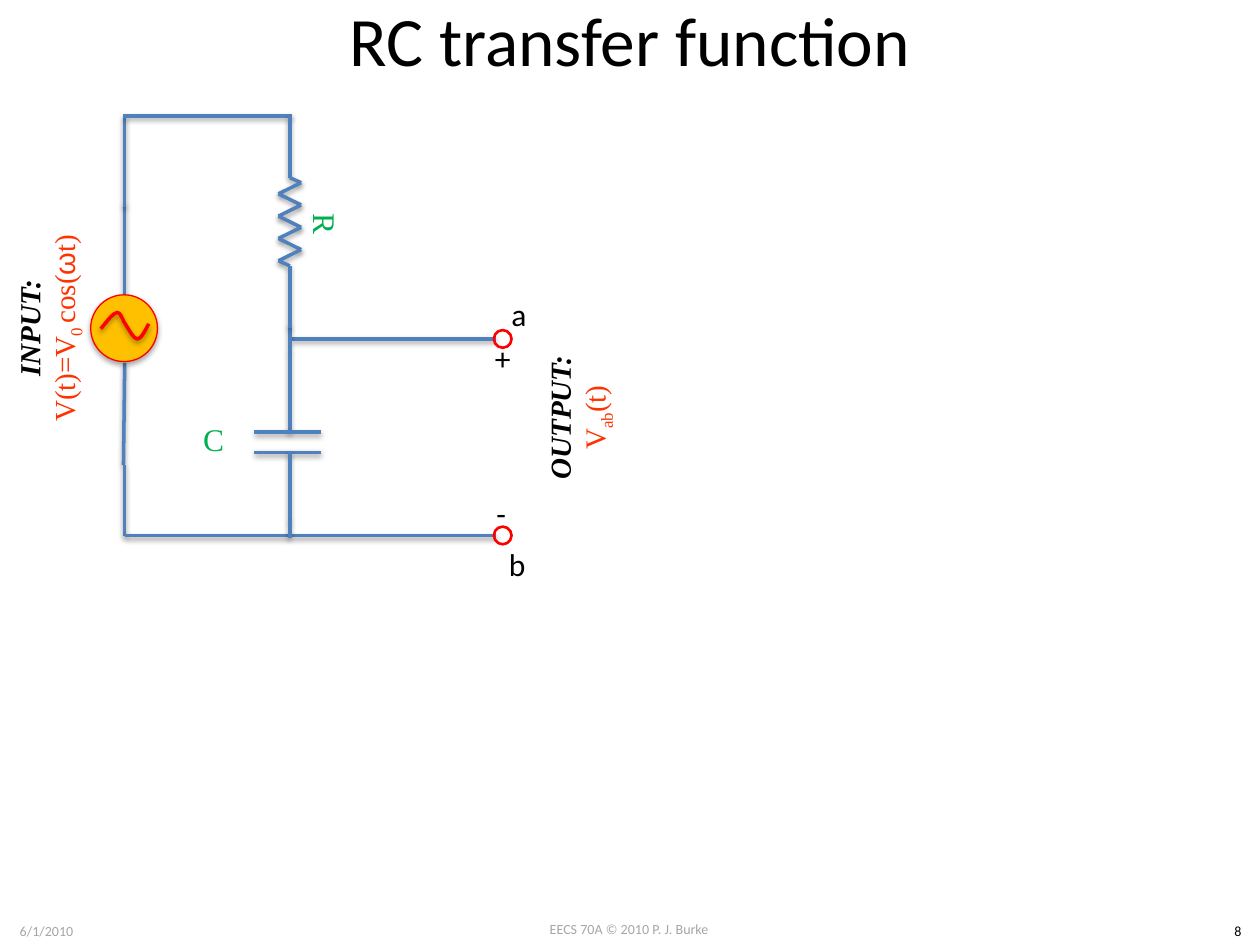
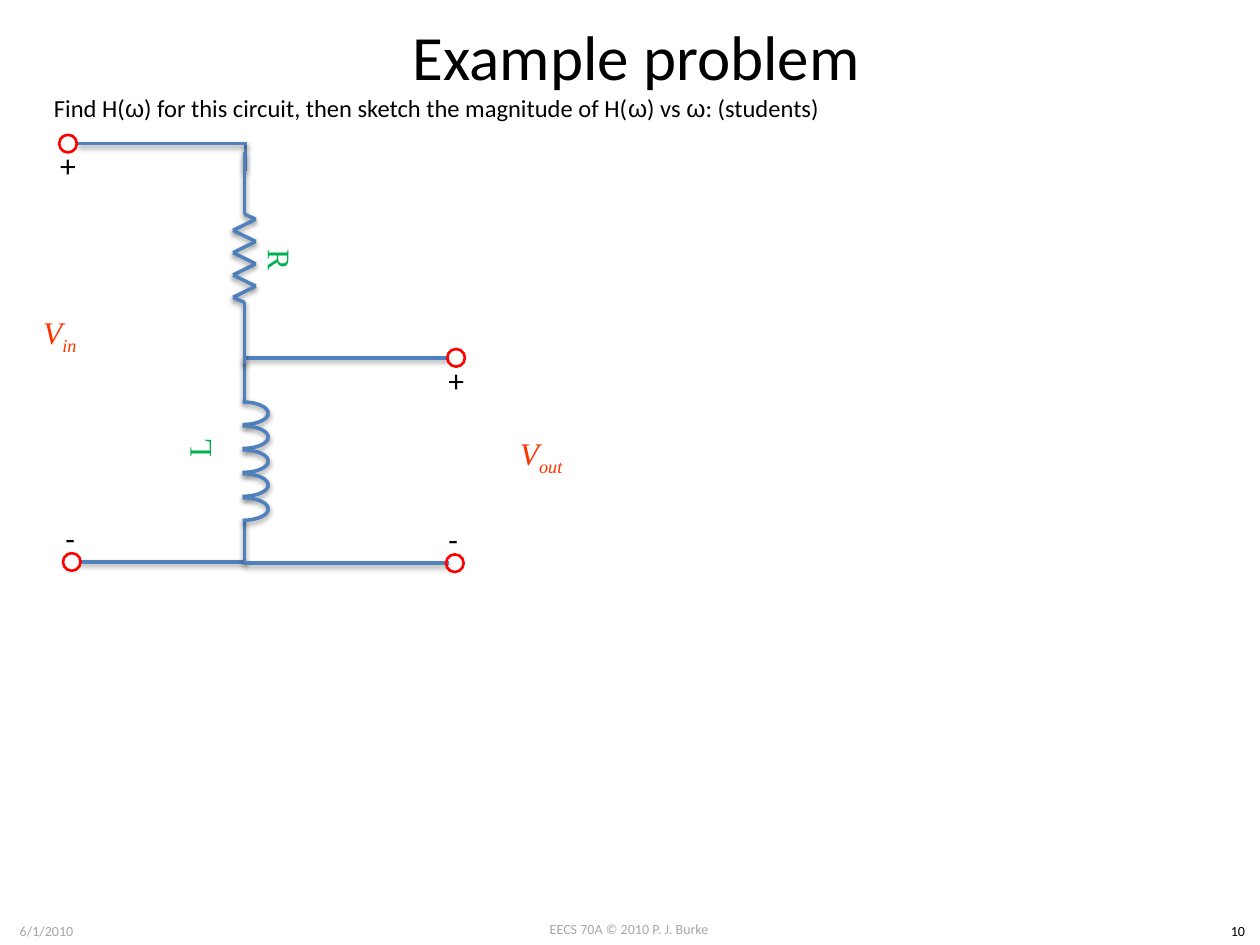
from dataclasses import dataclass
from itertools import pairwise
from lxml.etree import SubElement
from pptx import Presentation
from pptx.dml.color import RGBColor
from pptx.enum.shapes import MSO_CONNECTOR as Link, MSO_SHAPE as Form
from pptx.enum.text import MSO_ANCHOR as Anchor, MSO_AUTO_SIZE as Fit, PP_ALIGN as Align
from pptx.oxml.ns import qn
from pptx.util import Inches, Pt


@dataclass(frozen=True)
class Theme:
    wire: str = "4F81BD"
    node: str = "FF0000"
    supply: str = "FFC000"
    ink: str = "000000"
    gray: str = "A6A6A6"
    volt: str = "FF3300"
    green: str = "00B050"
    sans: str = "Calibri"
    greek: str = "Arial"
    serif: str = "Times New Roman"
    small: float = 8
    body: float = 14
    port: float = 16.6
    label: float = 18
    thick: float = 2
    ring: float = 1.5
    thin: float = 0.75


T = Theme()

STYLES = {
    "foot": (T.sans, T.small, T.gray, False, False),
    "page": (T.sans, T.small, T.ink, False, False),
    "body": (T.sans, T.body, T.ink, False, False),
    "omega": (T.greek, T.body, T.ink, False, False),
    "mark": (T.sans, T.label, T.ink, False, False),
    "tag": (T.serif, T.label, T.green, False, False),
    "head": (T.serif, T.port, T.ink, True, True),
    "volt": (T.serif, T.port, T.volt, False, False),
    "freq": (T.greek, T.port, T.volt, False, False),
    "name": (T.serif, T.label, T.volt, False, True),
}

FOOTS = [
    ("EECS 70A © 2010 P. J. Burke", (3.83, 7.26, 2.33, 0.24)),
    ("6/1/2010", (0, 7.27, 0.74, 0.24)),
]
PAGE_BOX = (9.65, 7.27, 0.35, 0.24)
MARKS = {"+": 0.33, "-": 0.28, "a": 0.32, "b": 0.34}
DOT = 0.14
TAG_SIZE = (1.19, 0.73)

RC = {
    "title": "RC transfer function",
    "size": 39.6,
    "box": (0.5, 0, 9, 0.62),
    "page": "8",
    "wires": [
        [(0.98, 3.69), (0.99, 2.88)],
        [(0.99, 2.34), (0.99, 1.62)],
        [(0.99, 1.64), (0.99, 0.92)],
        [(2.32, 0.92), (0.98, 0.92)],
        [(0.99, 3.69), (0.99, 4.25), (2.31, 4.25)],
        [(2.32, 4.25), (3.94, 4.25)],
        [(2.32, 2.69), (3.94, 2.69)],
        [(2.3, 2.58), (2.3, 2.8), (2.3, 3.43)],
        [(2.55, 3.43), (2.02, 3.43)],
        [(2.55, 3.59), (2.02, 3.59)],
        [(2.3, 3.59), (2.3, 4.13), (2.3, 4.27)],
    ],
    "resistor": (2.3, 1.41),
    "nodes": [(3.92, 2.62), (3.92, 4.18)],
    "marks": [("a", 3.96, 2.29), ("b", 3.94, 4.28), ("+", 3.83, 2.64), ("-", 3.84, 3.87)],
    "tags": [("C", (1.1, 3.12), 0)],
}
PORTS = [
    ((-0.67, 2.24, 2.11, 0.61), [
        [("INPUT:", "head")],
        [("V(t)=V", "volt"), ("0 ", "volt", "sub"), ("cos(", "volt"), ("ω", "freq"), ("t)", "volt")],
    ]),
    ((3.54, 2.95, 2.11, 0.61), [
        [("OUTPUT:", "head")],
        [("V", "volt"), ("ab", "volt", "sub"), ("(t)", "volt")],
    ]),
]
SUPPLY_BOX = (0.72, 2.34, 0.53, 0.53)
SINE = [
    [(0.8, 2.61), (0.85, 2.55), (0.89, 2.49), (0.93, 2.48)],
    [(0.93, 2.48), (0.96, 2.48), (0.97, 2.54), (1, 2.58)],
    [(1, 2.58), (1.02, 2.61), (1.06, 2.69), (1.09, 2.69)],
    [(1.09, 2.69), (1.12, 2.69), (1.15, 2.63), (1.18, 2.57)],
]

RL = {
    "title": "Example problem",
    "size": 36,
    "box": (0.55, 0, 9, 0.87),
    "page": "10",
    "wires": [
        [(0.63, 4.46), (1.95, 4.46)],
        [(1.95, 1.36), (1.95, 1.14)],
        [(1.96, 1.14), (0.62, 1.14)],
        [(1.94, 3.19), (1.94, 2.84), (3.56, 2.84)],
        [(1.94, 4.12), (1.94, 4.47), (3.56, 4.47)],
    ],
    "resistor": (1.94, 1.7),
    "nodes": [(3.55, 2.77), (3.54, 4.4), (0.47, 1.07), (0.5, 4.39)],
    "marks": [("+", 3.46, 2.82), ("-", 3.46, 4.08), ("+", 0.38, 1.11), ("-", 0.42, 4.07)],
    "tags": [("L", (0.98, 3.19), 270)],
}
TASK = [
    ("Find H(", "body"), ("ω", "omega"),
    (") for this circuit, then sketch the magnitude of H(", "body"), ("ω", "omega"),
    (") vs ", "body"), ("ω", "omega"), (": (students)", "body"),
]
TASK_BOX = (0.33, 0.69, 8.91, 0.34)
NAMES = [("out", (3.91, 3.31, 0.77, 0.61)), ("in", (0.09, 2.35, 0.77, 0.61))]
COIL = {"left": 1.72, "top": 3.19, "turns": 5, "step": 0.19, "size": (0.41, 0.18)}


def rgb(code):
    return RGBColor.from_string(code)


def place(box):
    return [Inches(v) for v in box]


def cast(item, alpha=38, dist=1.6):
    props = item._element.spPr
    for old in props.findall(qn("a:effectLst")):
        props.remove(old)
    glow = SubElement(SubElement(props, qn("a:effectLst")), qn("a:outerShdw"),
                      blurRad=str(Pt(3.1)), dist=str(Pt(dist)), dir="5400000", rotWithShape="0")
    shade = SubElement(glow, qn("a:srgbClr"), val=T.ink)
    SubElement(shade, qn("a:alpha"), val=str(alpha * 1000))


def stroke(item, color=T.wire, width=T.thick):
    item.line.color.rgb = rgb(color)
    item.line.width = Pt(width)


def outline(item, color=T.wire, width=T.thick, fill=None):
    item.shadow.inherit = False
    if fill:
        item.fill.solid()
        item.fill.fore_color.rgb = rgb(fill)
    else:
        item.fill.background()
    stroke(item, color, width)


def wire(slide, points):
    for start, end in pairwise(points):
        line = slide.shapes.add_connector(Link.STRAIGHT, *place(start + end))
        stroke(line)
        cast(line)


def write(slide, box, paras, align=Align.CENTER, mid=False, turn=0, wrap=True):
    item = slide.shapes.add_textbox(*place(box))
    item.rotation = turn
    frame = item.text_frame
    frame.word_wrap = wrap
    frame.auto_size = Fit.NONE if mid else Fit.SHAPE_TO_FIT_TEXT
    frame.vertical_anchor = Anchor.MIDDLE if mid else Anchor.TOP
    for i, runs in enumerate(paras):
        para = frame.paragraphs[0] if i == 0 else frame.add_paragraph()
        para.alignment = align
        if runs[0][1] == "head":
            para._p.get_or_add_pPr().set("marR", str(Inches(0.12)))
        for text, style, *sub in runs:
            run = para.add_run()
            run.text = text
            font = run.font
            font.name, size, color, font.bold, font.italic = STYLES[style]
            font.size = Pt(size)
            font.color.rgb = rgb(color)
            if sub:
                run._r.get_or_add_rPr().set("baseline", "-25000")


def tag(slide, text, spot, turn):
    write(slide, spot + TAG_SIZE, [[(text, "tag")]], mid=True, turn=turn)


def resistor(slide, x, top):
    lead, tall, half, teeth = 0.49, 0.7, 0.09, 8
    step = (tall - 0.08) / (teeth - 1)
    zig = [(x - half * (-1) ** (i + 1), top + 0.04 + i * step) for i in range(teeth)]
    end = top + tall
    wire(slide, [(x, top - lead), (x, top), *zig, (x, end), (x, end + lead)])
    tag(slide, "R", (x - 0.31, top), 90)


def supply(slide):
    disc = slide.shapes.add_shape(Form.OVAL, *place(SUPPLY_BOX))
    outline(disc, T.node, T.thin, T.supply)
    cast(disc, 35, 1.8)
    dots = [SINE[0][0]]
    for a, b, c, d in SINE:
        for t in (0.2, 0.4, 0.6, 0.8, 1):
            u = 1 - t
            dots.append(tuple(u**3 * p + 3 * u * u * t * q + 3 * u * t * t * r + t**3 * s
                              for p, q, r, s in zip(a, b, c, d)))
    first, *rest = [tuple(place(dot)) for dot in dots]
    pen = slide.shapes.build_freeform(*first)
    pen.add_line_segments(rest, close=False)
    wave = pen.convert_to_shape()
    outline(wave, T.node)
    cast(wave)


def coil(slide):
    for i in range(COIL["turns"]):
        box = (COIL["left"], COIL["top"] + i * COIL["step"], *COIL["size"])
        for flip in (False, True):
            arc = slide.shapes.add_shape(Form.ARC, *place(box))
            outline(arc)
            cast(arc)
            if flip:
                arc._element.spPr.xfrm.set("flipV", "1")


def start(deck, data):
    slide = deck.slides.add_slide(deck.slide_layouts[5])
    title = slide.shapes.title
    title.left, title.top, title.width, title.height = place(data["box"])
    frame = title.text_frame
    frame.auto_size = Fit.NONE
    frame.vertical_anchor = Anchor.MIDDLE
    para = frame.paragraphs[0]
    para.alignment = Align.CENTER
    run = para.add_run()
    run.text = data["title"]
    run.font.name, run.font.size = T.sans, Pt(data["size"])
    run.font.color.rgb = rgb(T.ink)
    for text, box in FOOTS:
        write(slide, box, [[(text, "foot")]])
    write(slide, PAGE_BOX, [[(data["page"], "page")]])
    return slide


def circuit(slide, data):
    for points in data["wires"]:
        wire(slide, points)
    resistor(slide, *data["resistor"])
    for spot in data["nodes"]:
        ring = slide.shapes.add_shape(Form.OVAL, *place(spot + (DOT, DOT)))
        outline(ring, T.node, T.ring)
    for text, x, y in data["marks"]:
        write(slide, (x, y, MARKS[text], 0.4), [[(text, "mark")]], Align.LEFT, wrap=False)
    for text, spot, turn in data["tags"]:
        tag(slide, text, spot, turn)


def main():
    deck = Presentation()
    deck.slide_width, deck.slide_height = Inches(10), Inches(7.5)

    slide = start(deck, RC)
    circuit(slide, RC)
    supply(slide)
    for box, paras in PORTS:
        write(slide, box, paras, mid=True, turn=270)

    slide = start(deck, RL)
    circuit(slide, RL)
    coil(slide)
    write(slide, TASK_BOX, [TASK], Align.LEFT)
    for sub, box in NAMES:
        write(slide, box, [[("V", "name"), (sub, "name", "sub")]], mid=True)

    deck.save("out.pptx")


if __name__ == "__main__":
    main()
